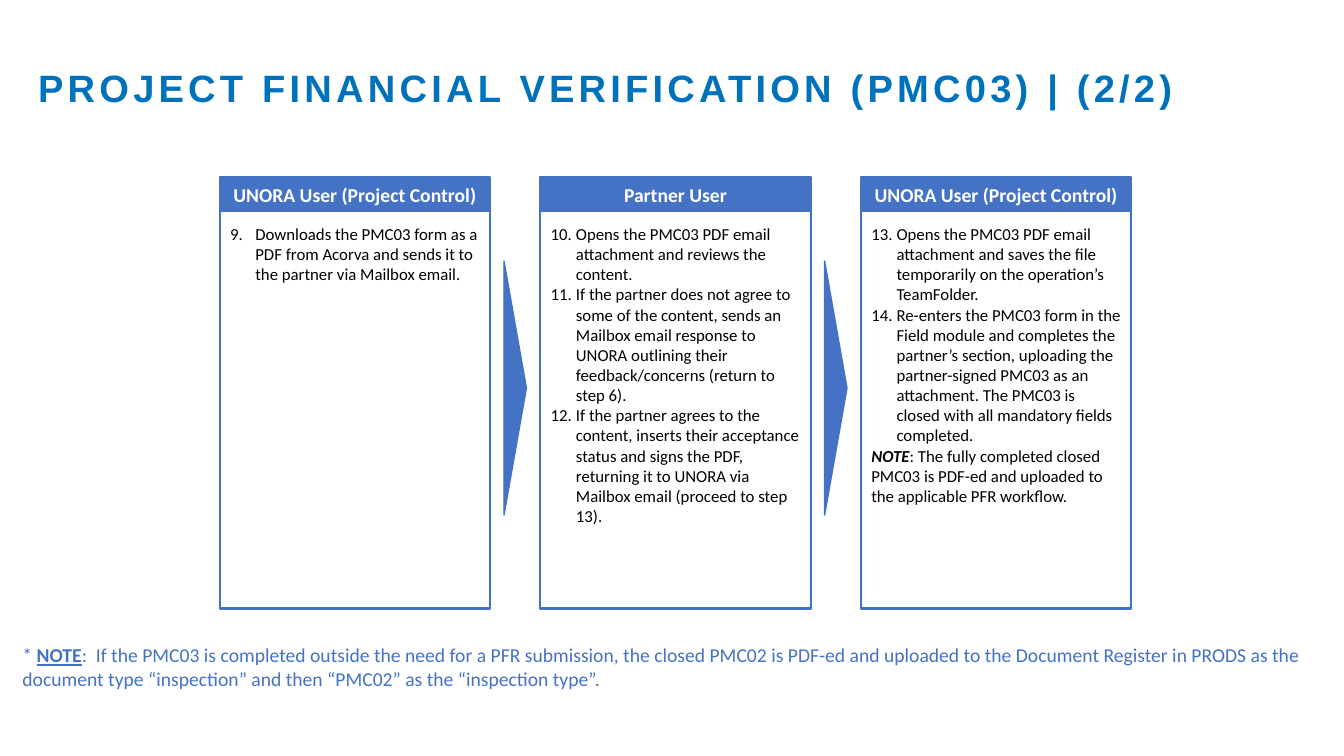
from dataclasses import dataclass

from lxml.etree import SubElement
from pptx import Presentation
from pptx.dml.color import RGBColor as RGB
from pptx.enum.shapes import MSO_SHAPE as Shape
from pptx.enum.text import MSO_ANCHOR as Anchor, MSO_AUTO_SIZE as Fit, PP_ALIGN as Align
from pptx.oxml.ns import qn
from pptx.util import Pt


@dataclass(frozen=True)
class Theme:
    title: RGB = RGB(0x00, 0x72, 0xBC)
    blue: RGB = RGB(0x44, 0x72, 0xC4)
    white: RGB = RGB(0xFF, 0xFF, 0xFF)
    black: RGB = RGB(0, 0, 0)
    head: str = "Arial"
    body: str = "Calibri"
    big: float = 27.2
    mid: float = 14
    small: float = 12


THEME = Theme()

# heading, first step number, steps, closing note, text height
CARDS = [
    ("UNORA User (Project Control)", 9, [
        "Downloads the PMC03 form as a PDF from Acorva and sends it to the "
        "partner via Mailbox email.",
    ], None, 51),
    ("Partner User", 10, [
        "Opens the PMC03 PDF email attachment and reviews the content.",
        "If the partner does not agree to some of the content, sends an Mailbox email "
        "response to UNORA outlining their feedback/concerns (return to step 6).",
        "If the partner agrees to the content, inserts their acceptance status and signs "
        "the PDF, returning it to UNORA via Mailbox email (proceed to step 13).",
    ], None, 225),
    ("UNORA User (Project Control)", 13, [
        "Opens the PMC03 PDF email attachment and saves the file temporarily on the "
        "operation’s TeamFolder.",
        "Re-enters the PMC03 form in the Field module and completes the partner’s section, "
        "uploading the partner-signed PMC03 as an attachment. The PMC03 is closed with all "
        "mandatory fields completed.",
    ], ": The fully completed closed PMC03 is PDF-ed and uploaded to the applicable "
       "PFR workflow.", 211),
]


def add_run(para, text, size, color, face=THEME.body, bold=False, italic=False, under=False):
    run = para.add_run()
    run.text = text
    font = run.font
    font.name, font.size, font.color.rgb = face, Pt(size), color
    font.bold, font.italic, font.underline = bold, italic, under
    return run


def add_form(slide, kind, box, width, fill=None):
    form = slide.shapes.add_shape(kind, *map(Pt, box))
    form.shadow.inherit = False
    form.line.color.rgb = THEME.blue
    form.line.width = Pt(width)
    if fill is None:
        form.fill.background()
    else:
        form.fill.solid()
        form.fill.fore_color.rgb = fill
    return form


def add_box(slide, box):
    frame = slide.shapes.add_textbox(*map(Pt, box)).text_frame
    frame.word_wrap = True
    frame.auto_size = Fit.SHAPE_TO_FIT_TEXT
    return frame


def number(para, start):
    """Number the paragraph in a list that begins at start."""
    props = para._p.get_or_add_pPr()
    props.set("marL", str(Pt(18)))
    props.set("indent", str(Pt(-18)))
    SubElement(props, qn("a:buFont"), typeface="+mj-lt")
    SubElement(props, qn("a:buAutoNum"), type="arabicPeriod", startAt=str(start))


def add_title(slide, box):
    title = slide.shapes.title
    title.left, title.top, title.width, title.height = map(Pt, box)
    frame = title.text_frame
    frame.auto_size = Fit.NONE
    frame.word_wrap = True
    frame.vertical_anchor = Anchor.BOTTOM
    para = frame.paragraphs[0]
    para.alignment = Align.LEFT
    para.line_spacing = 1.1
    run = add_run(para, "PROJECT FINANCIAL VERIFICATION (PMC03) | (2/2)",
                  THEME.big, THEME.title, THEME.head, bold=True)
    run._r.get_or_add_rPr().set("spc", "300")


def add_card(slide, box, head, start, steps, note, tall):
    left, top, width, _ = box
    add_form(slide, Shape.RECTANGLE, box, 1.5)

    bar = add_form(slide, Shape.RECTANGLE, (left, top, width, 24.5), 0.75, THEME.blue)
    frame = bar.text_frame
    frame.word_wrap = True
    frame.vertical_anchor = Anchor.MIDDLE
    para = frame.paragraphs[0]
    para.alignment = Align.CENTER
    add_run(para, head, THEME.mid, THEME.white, bold=True)

    frame = add_box(slide, (left + 0.3, top + 29.5, width, tall))
    for i, step in enumerate(steps):
        para = frame.add_paragraph() if i else frame.paragraphs[0]
        number(para, start)
        add_run(para, step, THEME.small, THEME.black)
    if note:
        para = frame.add_paragraph()
        add_run(para, "NOTE", THEME.small, THEME.black, bold=True, italic=True)
        add_run(para, note, THEME.small, THEME.black)


def add_arrow(slide, mid_x, mid_y):
    """Place a triangle pointing right, centred on the given point."""
    long, thick = 181.4, 16
    box = (mid_x - long / 2, mid_y - thick / 2, long, thick)
    add_form(slide, Shape.ISOSCELES_TRIANGLE, box, 1, THEME.blue).rotation = 90


def add_flow(slide, box, gap=36):
    left, top, width, height = box
    wide = (width - gap * (len(CARDS) - 1)) / len(CARDS)
    for i, card in enumerate(CARDS):
        x = left + i * (wide + gap)
        if i:
            add_arrow(slide, x - gap / 2, top + height / 2 - 3.5)
        add_card(slide, (x, top, wide, height), *card)


def add_note(slide, box):
    frame = add_box(slide, box)
    frame.margin_left = frame.margin_right = Pt(3)
    frame.margin_top = frame.margin_bottom = Pt(3)
    para = frame.paragraphs[0]
    add_run(para, "* ", THEME.mid, THEME.blue)
    add_run(para, "NOTE", THEME.mid, THEME.blue, bold=True, under=True)
    add_run(para, ":  If the PMC03 is completed outside the need for a PFR submission, the "
            "closed PMC02 is PDF-ed and uploaded to the Document Register in PRODS as the "
            "document type “inspection” and then “PMC02” as the “inspection type”.",
            THEME.mid, THEME.blue)


def main():
    deck = Presentation()
    deck.slide_width, deck.slide_height = Pt(960), Pt(540)
    slide = deck.slides.add_slide(deck.slide_layouts[5])
    add_title(slide, (20, 39, 898, 43))
    add_flow(slide, (157, 126.7, 651, 308))
    add_note(slide, (13, 456.5, 926, 40))
    deck.save("out.pptx")


if __name__ == "__main__":
    main()
